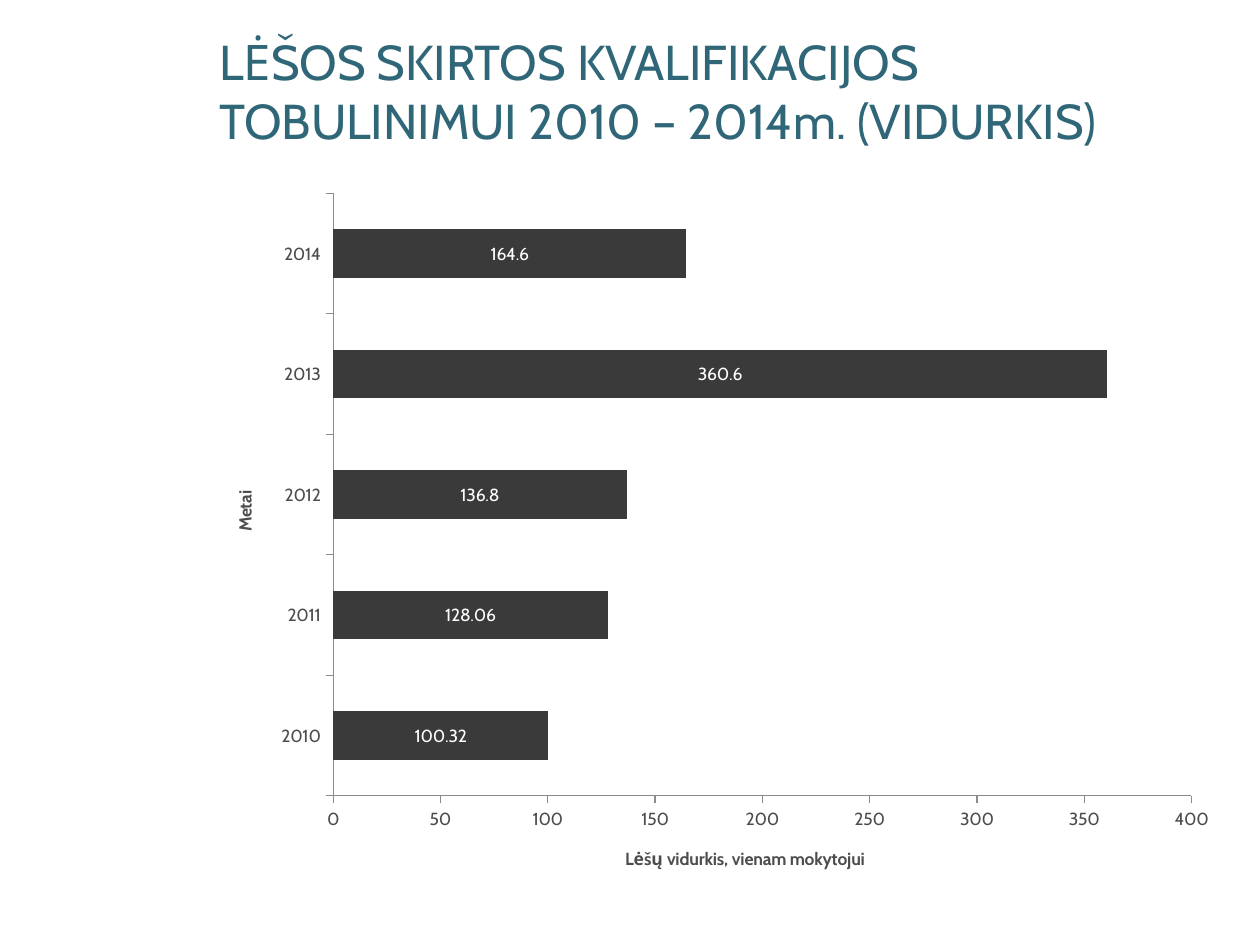
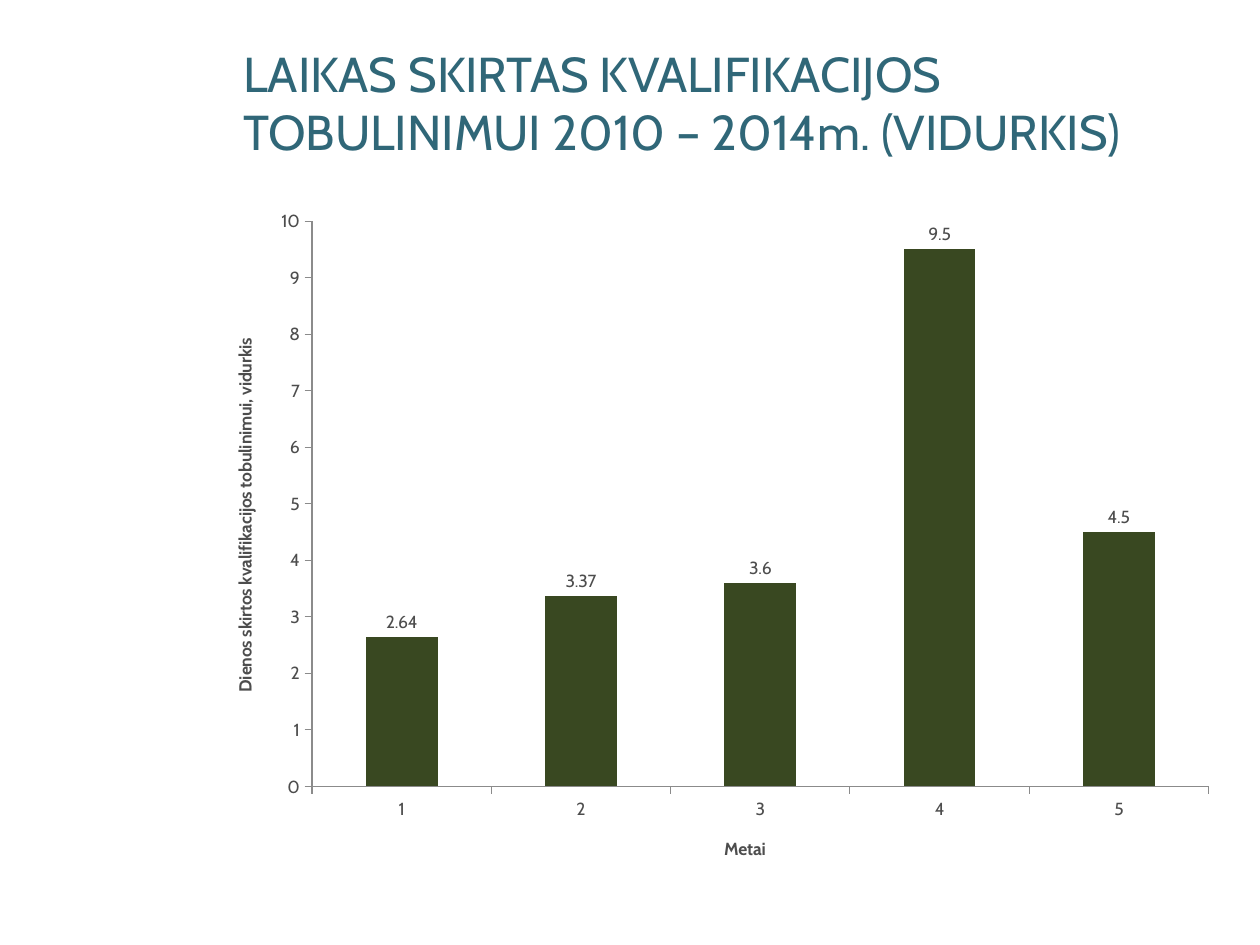
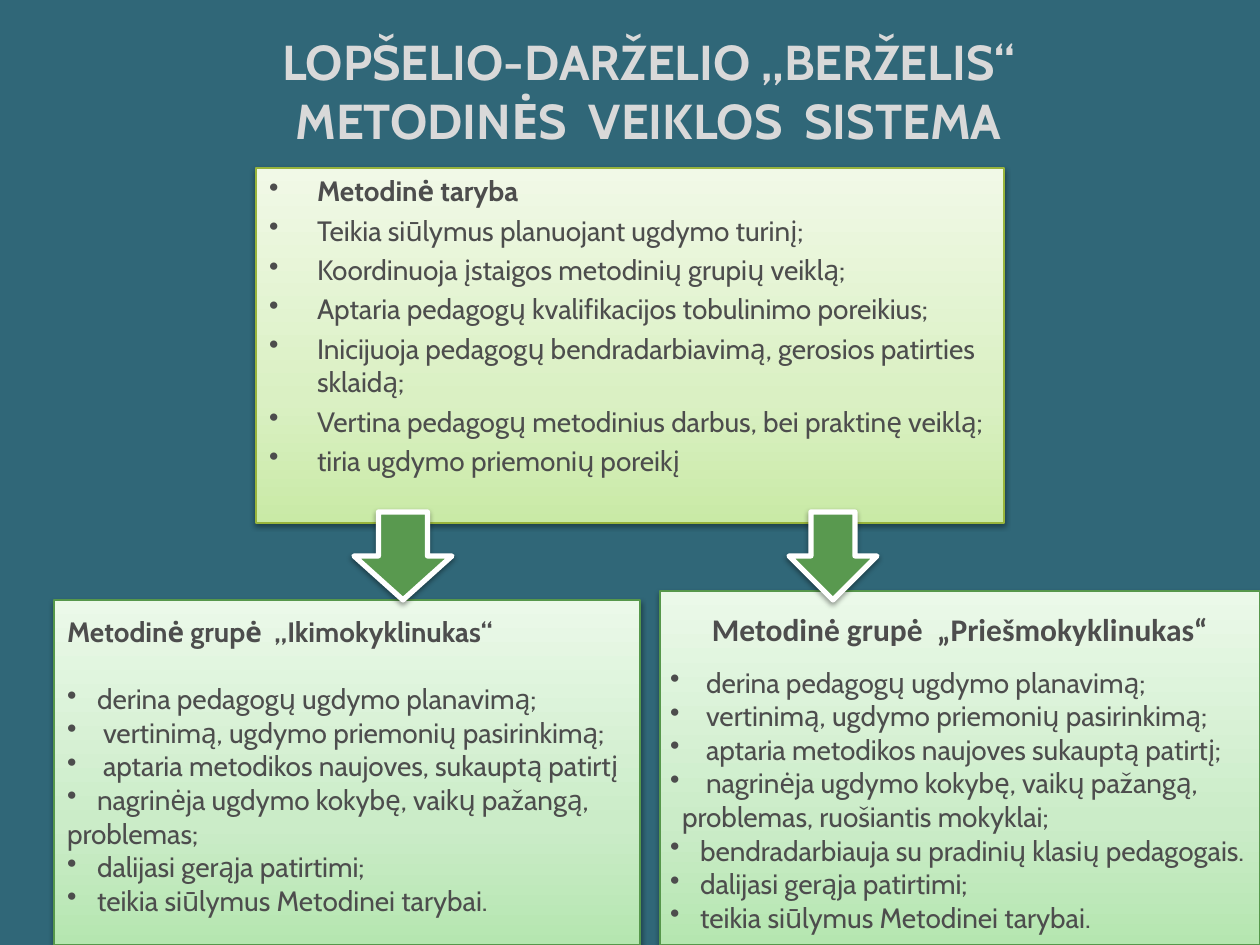
from lxml.etree import SubElement
from pptx import Presentation
from pptx.chart.data import CategoryChartData
from pptx.dml.color import RGBColor
from pptx.enum.chart import XL_CHART_TYPE as ChartType, XL_LABEL_POSITION as LabelPos
from pptx.enum.shapes import MSO_SHAPE as Preset
from pptx.enum.text import MSO_ANCHOR as Anchor, PP_ALIGN as Align
from pptx.oxml.ns import qn
from pptx.util import Emu, Pt

SCALE = 914400 / 126
FONT = "Cabin"
COLORS = {
    "teal": "306778", "white": "FFFFFF", "silver": "D9D9D9", "text": "4D4D4D",
    "axis": "8B8B8B", "funds": "3A3A3A", "days": "394821",
    "arrow": "59994F", "group_line": "56974B", "council_line": "98B43C",
    "shadow": "000000",
}
GROUP_GRADIENT = [(0, "B5E6B0"), (35, "CBECC8"), (100, "EBF9E9")]
COUNCIL_GRADIENT = [(0, "C9EAA6"), (35, "DAF0C3"), (100, "F1F9E7")]
BULLET_GAP = 30
WIDE_GAP = 36


def px(length):
    """Turn whole pixels into EMU."""
    return Emu(round(length * SCALE))


def place(left, top, width, height):
    """Turn a pixel frame into EMU."""
    return [px(length) for length in (left, top, width, height)]


def rgb(name):
    """Look up a named colour."""
    return RGBColor.from_string(COLORS[name])


def set_font(font, color, size, bold=False, face=FONT):
    """Apply face, size, weight and colour."""
    font.name, font.size, font.bold = face, Pt(size), bold
    font.color.rgb = rgb(color)


def add_slide(prs, background):
    """Add a blank slide with a plain background."""
    slide = prs.slides.add_slide(prs.slide_layouts[6])
    slide.background.fill.solid()
    slide.background.fill.fore_color.rgb = rgb(background)
    return slide


def add_title(slide, text, frame, color="teal", bold=False, align=Align.LEFT):
    """Add the heading of a slide."""
    heading = slide.shapes.add_textbox(*place(*frame)).text_frame
    heading.word_wrap = True
    heading.vertical_anchor = Anchor.MIDDLE
    line = heading.paragraphs[0]
    line.text, line.alignment = text, align
    set_font(line.font, color, 28, bold)


def style_axis(axis, title):
    """Give an axis its bold title, grey line and no gridlines."""
    axis.has_major_gridlines = False
    axis.format.line.color.rgb = rgb("axis")
    axis.format.line.width = Pt(0.75)
    caption = axis.axis_title.text_frame.paragraphs[0]
    caption.text = title
    set_font(caption.font, "text", 10, True)


def add_bars(slide, kind, frame, points, titles, scale, color, label_color, label_pos):
    """Add a one-series bar chart with value labels."""
    data = CategoryChartData()
    data.categories = list(points)
    data.add_series("Series 1", points.values())
    chart = slide.shapes.add_chart(kind, *place(*frame), data).chart
    chart.has_legend = chart.has_title = False
    set_font(chart.font, "text", 10)
    style_axis(chart.category_axis, titles[0])
    style_axis(chart.value_axis, titles[1])
    chart.value_axis.minimum_scale = 0
    chart.value_axis.maximum_scale, chart.value_axis.major_unit = scale
    plot = chart.plots[0]
    plot.gap_width, plot.vary_by_categories = 150, False
    bars = plot.series[0].format.fill
    bars.solid()
    bars.fore_color.rgb = rgb(color)
    plot.has_data_labels = True
    labels = plot.data_labels
    labels.show_value, labels.position = True, label_pos
    set_font(labels.font, label_color, 10)


def add_shadow(shape):
    """Give a shape a soft shadow straight below."""
    effects = SubElement(shape._element.spPr, qn("a:effectLst"))
    shadow = SubElement(effects, qn("a:outerShdw"), blurRad=str(Pt(3.1)),
                        dist=str(Pt(1.6)), dir="5400000", rotWithShape="0")
    tint = SubElement(shadow, qn("a:srgbClr"), val=COLORS["shadow"])
    SubElement(tint, qn("a:alpha"), val="38000")


def fill_gradient(shape, stops):
    """Fill a shape with a gradient that rises from its bottom edge."""
    shape.fill.gradient()
    shape.fill.gradient_angle = 90
    stop_list = shape._element.spPr.find(qn("a:gradFill")).find(qn("a:gsLst"))
    for old in list(stop_list):
        stop_list.remove(old)
    for percent, color in stops:
        stop = SubElement(stop_list, qn("a:gs"), pos=str(percent * 1000))
        SubElement(stop, qn("a:srgbClr"), val=color)


def add_panel(slide, frame, stops, line_color, margins):
    """Add a gradient box and return its text frame."""
    panel = slide.shapes.add_shape(Preset.RECTANGLE, *place(*frame))
    fill_gradient(panel, stops)
    panel.line.color.rgb = rgb(line_color)
    panel.line.width = Pt(0.75)
    add_shadow(panel)
    body = panel.text_frame
    body.word_wrap, body.vertical_anchor = True, Anchor.TOP
    body.margin_left = body.margin_right = px(margins[0])
    body.margin_top, body.margin_bottom = px(margins[1]), 0
    return body


def add_line(body, text, indent=0, bullet=True, before=0, bold=False,
             size=16, face=FONT, align=Align.LEFT):
    """Write the next paragraph of a box."""
    first = body.paragraphs[0]
    line = first if not first.runs else body.add_paragraph()
    line.text, line.alignment = text, align
    if before:
        line.space_before = Pt(before)
    props = line._p.get_or_add_pPr()
    props.set("marL", str(px(indent)))
    props.set("indent", str(px(-indent if bullet else 0)))
    if bullet:
        SubElement(props, qn("a:buChar"), char="•")
    set_font(line.font, "text", size, bold, face)


def add_group(body, heading, gap, lines):
    """Write a group's heading and its list, gap points apart."""
    add_line(body, bullet=False, bold=True, **heading)
    for number, (text, indent, bullet) in enumerate(lines):
        add_line(body, text, indent, bullet, before=0 if number else gap)


def add_arrow(slide, frame):
    """Add a white-edged green arrow that points down."""
    arrow = slide.shapes.add_shape(Preset.DOWN_ARROW, *place(*frame))
    arrow.fill.solid()
    arrow.fill.fore_color.rgb = rgb("arrow")
    arrow.line.color.rgb = rgb("white")
    arrow.line.width = Pt(3)
    add_shadow(arrow)


def build_funds(prs):
    """Build the slide on training funds."""
    slide = add_slide(prs, "white")
    add_title(slide, "LĖŠOS SKIRTOS KVALIFIKACIJOS TOBULINIMUI 2010 – 2014m. (VIDURKIS)",
              (207, 29, 1032, 122))
    funds = {"2010": 100.32, "2011": 128.06, "2012": 136.8, "2013": 360.6, "2014": 164.6}
    add_bars(slide, ChartType.BAR_CLUSTERED, (207, 179, 1022, 717), funds,
             ("Metai", "Lėšų vidurkis, vienam mokytojui"), (400, 50),
             "funds", "white", LabelPos.CENTER)


def build_days(prs):
    """Build the slide on training time."""
    slide = add_slide(prs, "white")
    add_title(slide, "LAIKAS SKIRTAS KVALIFIKACIJOS TOBULINIMUI 2010 – 2014m. (VIDURKIS)",
              (231, 53, 1008, 98))
    days = {"1": 2.64, "2": 3.37, "3": 3.6, "4": 9.5, "5": 4.5}
    add_bars(slide, ChartType.COLUMN_CLUSTERED, (207, 197, 1022, 689), days,
             ("Metai", "Dienos skirtos kvalifikacijos tobulinimui, vidurkis"), (10, 1),
             "days", "text", LabelPos.OUTSIDE_END)


def build_system(prs):
    """Build the slide on the council and its two groups."""
    slide = add_slide(prs, "teal")
    add_title(slide, "LOPŠELIO-DARŽELIO „BERŽELIS“\vMETODINĖS  VEIKLOS  SISTEMA",
              (59, 29, 1179, 122), "silver", True, Align.CENTER)

    council = add_panel(slide, (256, 168, 748, 355), COUNCIL_GRADIENT, "council_line", (13, 6))
    add_line(council, "Metodinė taryba", 48, bold=True)
    for duty in (
        "Teikia siūlymus planuojant ugdymo turinį;",
        "Koordinuoja įstaigos metodinių grupių veiklą;",
        "Aptaria pedagogų kvalifikacijos tobulinimo poreikius;",
        "Inicijuoja pedagogų bendradarbiavimą, gerosios patirties sklaidą;",
        "Vertina pedagogų metodinius darbus, bei praktinę veiklą;",
        "tiria ugdymo priemonių poreikį",
    ):
        add_line(council, duty, 48, before=3.3)

    nursery = add_panel(slide, (54, 600, 586, 345), GROUP_GRADIENT, "group_line", (13, 15))
    add_group(nursery, {"text": "Metodinė grupė  „Ikimokyklinukas“"}, 19, [
        ("derina pedagogų ugdymo planavimą;", BULLET_GAP, True),
        ("vertinimą, ugdymo priemonių pasirinkimą;", WIDE_GAP, True),
        ("aptaria metodikos naujoves, sukauptą patirtį", WIDE_GAP, True),
        ("nagrinėja ugdymo kokybę, vaikų pažangą,", BULLET_GAP, True),
        ("problemas;", 0, False),
        ("dalijasi gerąja patirtimi;", BULLET_GAP, True),
        ("teikia siūlymus Metodinei tarybai.", BULLET_GAP, True),
    ])

    preschool = add_panel(slide, (660, 591, 600, 354), GROUP_GRADIENT, "group_line", (10, 19))
    heading = {"text": "Metodinė grupė  „Priešmokyklinukas“", "size": 18,
               "face": "Calibri", "align": Align.CENTER}
    add_group(preschool, heading, 10, [
        ("derina pedagogų ugdymo planavimą;", WIDE_GAP, True),
        ("vertinimą, ugdymo priemonių pasirinkimą;", WIDE_GAP, True),
        ("aptaria metodikos naujoves sukauptą patirtį;", WIDE_GAP, True),
        ("nagrinėja ugdymo kokybę, vaikų pažangą,", WIDE_GAP, True),
        ("problemas, ruošiantis mokyklai;", 12, False),
        ("bendradarbiauja su pradinių klasių pedagogais.", BULLET_GAP, True),
        ("dalijasi gerąja patirtimi;", BULLET_GAP, True),
        ("teikia siūlymus Metodinei tarybai.", BULLET_GAP, True),
    ])

    for left, width in ((354, 98), (789, 88)):
        add_arrow(slide, (left, 512, width, 88))


def main():
    """Build and save the three slides."""
    prs = Presentation()
    prs.slide_width, prs.slide_height = px(1260), px(945)
    build_funds(prs)
    build_days(prs)
    build_system(prs)
    prs.save("out.pptx")


if __name__ == "__main__":
    main()
